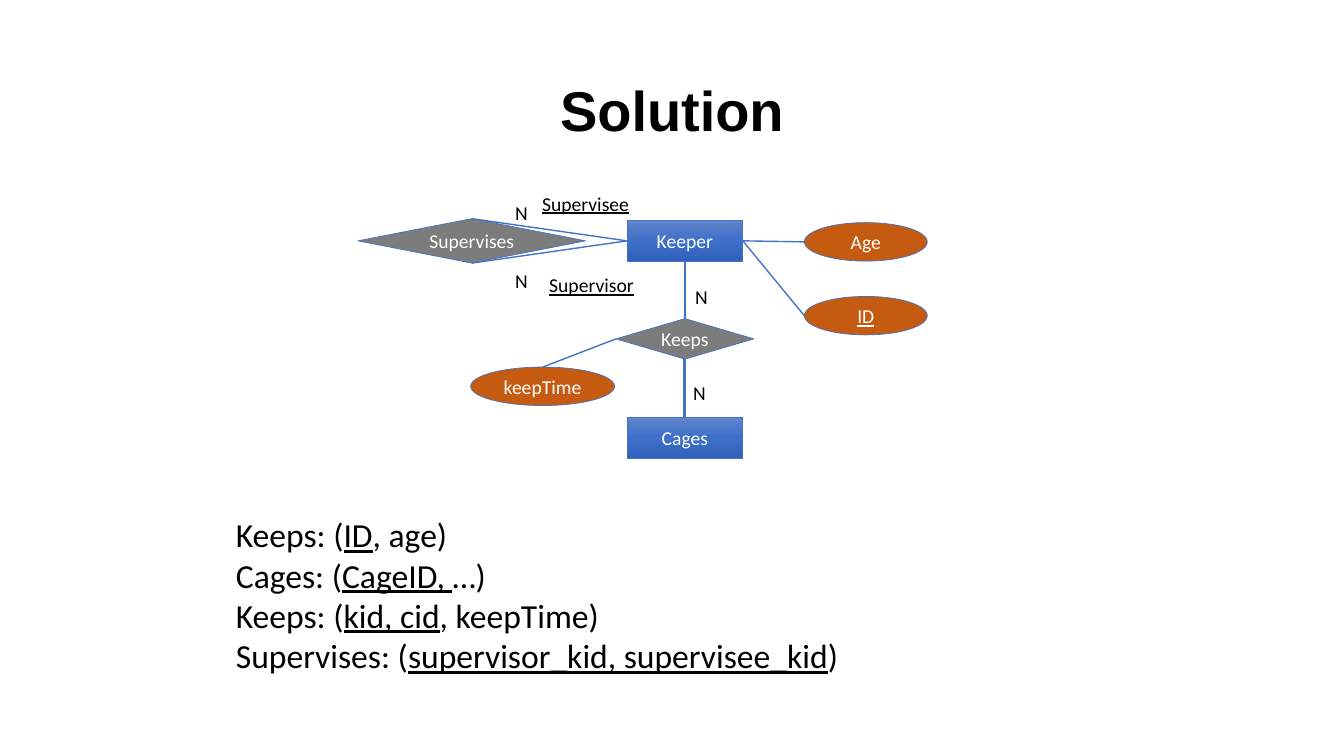
from copy import deepcopy

from lxml.etree import SubElement
from pptx import Presentation
from pptx.dml.color import RGBColor
from pptx.enum.shapes import MSO_CONNECTOR as Link, MSO_SHAPE as Form
from pptx.enum.text import MSO_ANCHOR as Anchor, MSO_AUTO_SIZE as Fit, PP_ALIGN as Align
from pptx.oxml.ns import qn
from pptx.util import Cm, Pt

BLACK = RGBColor(0x00, 0x00, 0x00)
WHITE = RGBColor(0xFF, 0xFF, 0xFF)
BLUE = RGBColor(0x44, 0x72, 0xC4)
ORANGE = RGBColor(0xC5, 0x5A, 0x11)
GREY = RGBColor(0x7C, 0x7C, 0x7C)
ENTITY_STOPS = [RGBColor(0x61, 0x83, 0xCB), RGBColor(0x3E, 0x70, 0xCA), RGBColor(0x30, 0x62, 0xBB)]

TITLE = {"name": "Arial", "size": Pt(40), "bold": True}
SCHEMA = {"name": "Calibri", "size": Pt(24)}
LABEL = {"name": "Calibri", "size": Pt(14)}
UNDERLINED = {**LABEL, "underline": True}

ENTITY_SIZE = (2.92, 1.02)
ATTRIBUTE_SIZE = (3.1, 0.97)
SIDES = {"left": (0, 0.5), "right": (1, 0.5), "top": (0.5, 0), "bottom": (0.5, 1)}

RELATIONS = [
    ("Keeps: (", "ID", ", age)"),
    ("Cages: (", "CageID, ", "…)"),
    ("Keeps: (", "kid, cid", ", keepTime)"),
    ("Supervises: (", "supervisor_kid, supervisee_kid", ")"),
]


def set_values(item, values):
    """Set every attribute named in a dict."""
    for name, value in values.items():
        setattr(item, name, value)


def place(item, left, top, width, height):
    """Move and size an element, in centimetres."""
    set_values(item, {"left": Cm(left), "top": Cm(top), "width": Cm(width), "height": Cm(height)})


def add_span(para, text, font, color):
    """Add one formatted run to a paragraph."""
    span = para.add_run()
    span.text = text
    set_values(span.font, font)
    span.font.color.rgb = color


def fill_title(title):
    """Write the slide heading."""
    place(title, 2.33, 1.01, 29.21, 3.68)
    title.text_frame.vertical_anchor = Anchor.MIDDLE
    para = title.text_frame.paragraphs[0]
    set_values(para, {"alignment": Align.CENTER, "line_spacing": 0.9})
    add_span(para, "Solution", TITLE, BLACK)


def fill_relations(body):
    """List the relations with their keys underlined."""
    place(body, 5.69, 12.83, 22.73, 4.37)
    frame = body.text_frame
    set_values(frame, {"auto_size": Fit.NONE, "word_wrap": True, "vertical_anchor": Anchor.TOP})
    for index, (opening, key, closing) in enumerate(RELATIONS):
        para = frame.add_paragraph() if index else frame.paragraphs[0]
        set_values(para, {"alignment": Align.LEFT, "space_before": Pt(0)})
        properties = para._p.get_or_add_pPr()
        properties.set("marL", "0")
        properties.set("indent", "0")
        SubElement(properties, qn("a:buNone"))
        add_span(para, opening, SCHEMA, BLACK)
        add_span(para, key, {**SCHEMA, "underline": True}, BLACK)
        add_span(para, closing, SCHEMA, BLACK)


def add_node(page, form, text, position, size, color=None, font=LABEL):
    """Draw an outlined shape with centred white text."""
    node = page.shapes.add_shape(form, *map(Cm, position + size))
    node.shadow.inherit = False
    node.line.color.rgb = BLUE
    node.line.width = Pt(0.5)
    if color:
        node.fill.solid()
        node.fill.fore_color.rgb = color
    frame = node.text_frame
    set_values(frame, {"margin_left": 0, "margin_right": 0, "margin_top": 0,
                       "margin_bottom": 0, "vertical_anchor": Anchor.MIDDLE})
    frame.paragraphs[0].alignment = Align.CENTER
    add_span(frame.paragraphs[0], text, font, WHITE)
    return node


def add_entity(page, text, position):
    """Draw an entity box with a vertical three-stop gradient."""
    node = add_node(page, Form.RECTANGLE, text, position, ENTITY_SIZE)
    node.fill.gradient()
    node.fill.gradient_angle = 270
    stop_list = node._element.spPr.find(qn("a:gradFill")).find(qn("a:gsLst"))
    stop_list.insert(1, deepcopy(stop_list[0]))
    for index, (stop, color) in enumerate(zip(node.fill.gradient_stops, ENTITY_STOPS)):
        stop.color.rgb = color
        stop.position = index / 2
    return node


def add_link(page, start, start_side, end, end_side, width=1):
    """Join the sides of two nodes with a straight line."""
    points = []
    for node, side in ((start, start_side), (end, end_side)):
        across, down = SIDES[side]
        points += [int(node.left + across * node.width), int(node.top + down * node.height)]
    link = page.shapes.add_connector(Link.STRAIGHT, *points)
    link.line.color.rgb = BLUE
    link.line.width = Pt(width)
    SubElement(link._element.spPr, qn("a:effectLst"))


def add_label(page, text, left, top, width, font=LABEL):
    """Add an unwrapped label beside a line."""
    box = page.shapes.add_textbox(Cm(left), Cm(top), Cm(width), Cm(0.86))
    set_values(box.text_frame, {"word_wrap": False, "auto_size": Fit.SHAPE_TO_FIT_TEXT})
    add_span(box.text_frame.paragraphs[0], text, font, BLACK)


def add_diagram(page):
    """Draw the entities, relationships, attributes and links."""
    keeper = add_entity(page, "Keeper", (15.8, 5.56))
    cages = add_entity(page, "Cages", (15.8, 10.52))
    keeps = add_node(page, Form.DIAMOND, "Keeps", (15.52, 8.03), (3.48, 1.02), GREY)
    supervises = add_node(page, Form.DIAMOND, "Supervises", (9.02, 5.51), (5.74, 1.12), GREY)
    age = add_node(page, Form.OVAL, "Age", (20.27, 5.61), ATTRIBUTE_SIZE, ORANGE)
    identity = add_node(page, Form.OVAL, "ID", (20.27, 7.47), ATTRIBUTE_SIZE, ORANGE, UNDERLINED)
    keep_time = add_node(page, Form.OVAL, "keepTime", (11.86, 9.25), (3.63, 0.97), ORANGE)

    add_link(page, keeper, "right", age, "left")
    add_link(page, keeper, "right", identity, "left")
    add_link(page, keeper, "bottom", keeps, "top")
    add_link(page, keeps, "bottom", cages, "top", 2)
    add_link(page, supervises, "top", keeper, "left")
    add_link(page, supervises, "bottom", keeper, "left")
    add_link(page, keeps, "left", keep_time, "top")

    for left, top in ((17.27, 7.06), (17.22, 9.47), (12.73, 4.95), (12.73, 6.65)):
        add_label(page, "N", left, top, 0.84)
    add_label(page, "Supervisee", 13.41, 4.7, 2.74, UNDERLINED)
    add_label(page, "Supervisor", 13.59, 6.76, 2.67, UNDERLINED)


def main():
    """Build and save the slide."""
    deck = Presentation()
    deck.slide_width = Cm(33.87)
    deck.slide_height = Cm(19.05)
    page = deck.slides.add_slide(deck.slide_layouts[1])
    fill_title(page.shapes.title)
    add_diagram(page)
    fill_relations(page.placeholders[1])
    deck.save("out.pptx")


if __name__ == "__main__":
    main()
